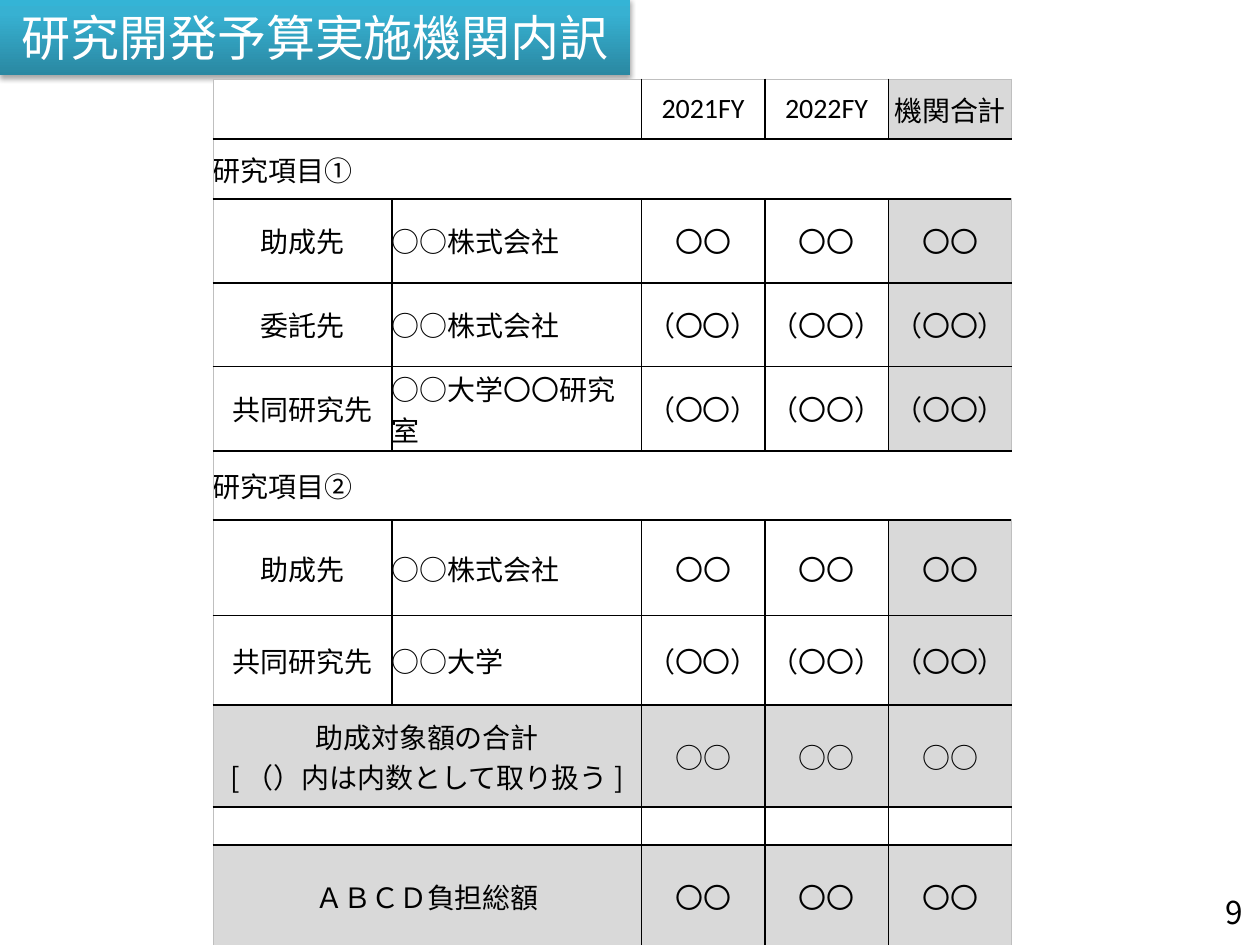
from dataclasses import dataclass

from lxml import etree
from pptx import Presentation
from pptx.dml.color import RGBColor
from pptx.enum import text
from pptx.oxml import parse_xml
from pptx.oxml.ns import nsdecls, qn
from pptx.util import Pt

BLACK = RGBColor(0x00, 0x00, 0x00)
WHITE = RGBColor(0xFF, 0xFF, 0xFF)
GREY = RGBColor(0xD9, 0xD9, 0xD9)
EDGE = RGBColor(0xBF, 0xBF, 0xBF)
LATIN, CJK = "Calibri", "Noto Sans CJK JP"
CENTER, LEFT, RIGHT = (text.PP_ALIGN.CENTER, text.PP_ALIGN.LEFT,
                       text.PP_ALIGN.RIGHT)
MIDDLE = text.MSO_ANCHOR.MIDDLE
NO_MARGINS = dict.fromkeys(
    ("margin_left", "margin_top", "margin_right", "margin_bottom"), 0)
GRADIENT = [(0, "2A88A2"), (80, "37B1D2"), (100, "34B4D6")]
COLUMNS = [102.2, 142.6, 70.6, 70.6, 70.6]
LAST = len(COLUMNS) - 1


@dataclass
class Row:
    height: float
    label: str = ""
    member: str = ""
    amounts: tuple = ("", "", "")
    span: int = 1              # columns taken by the label
    align: int = CENTER
    shade: tuple = (LAST,)     # grey columns
    thick: bool = False        # heavy line below
    amount_font: str = CJK


def section(height: float, label: str) -> Row:
    return Row(height, label, span=5, align=LEFT, shade=())


def party(height: float, label: str, member: str, amount: str, **kw) -> Row:
    return Row(height, label, member, (amount,) * 3, **kw)


def total(height: float, label: str, amount: str, **kw) -> Row:
    return Row(height, label, amounts=(amount,) * 3, span=2,
               shade=tuple(range(LAST + 1)), **kw)


FULL, PART = "〇〇", "（〇〇）"
ROWS = [
    Row(34.2, amounts=("2021FY", "2022FY", "機関合計"), span=2, thick=True,
        amount_font=LATIN),
    section(34.2, "研究項目①"),
    party(48, "助成先", "○○株式会社", FULL),
    party(48, "委託先", "○○株式会社", PART),
    party(48, "共同研究先", "○○大学〇〇研究室", PART, thick=True),
    section(39.6, "研究項目②"),
    party(54.7, "助成先", "○○株式会社", FULL),
    party(51, "共同研究先", "○○大学", PART),
    total(58.5, "助成対象額の合計\n[ （）内は内数として取り扱う ]", "○○", thick=True),
    Row(15, span=2, shade=()),
    total(58.5, "ＡＢＣＤ負担総額", FULL),
]


def set_format(obj, values: dict) -> None:
    for name, value in values.items():
        setattr(obj, name, value)


def write(tf, words: str, size: float, font: str, color: RGBColor,
          align: int) -> None:
    for i, line in enumerate(words.split("\n")):
        p = tf.paragraphs[0] if i == 0 else tf.add_paragraph()
        p.alignment = align
        r = p.add_run()
        r.text = line
        set_format(r.font, {"size": Pt(size), "name": font, "bold": False})
        r.font.color.rgb = color
        ea = etree.SubElement(r.font._element, qn("a:ea"))
        ea.set("typeface", CJK)


def add_border(cell, side: str, width: float, color: RGBColor) -> None:
    """Add one side; call in the order L, R, T, B and before the fill."""
    fill = (f'<a:solidFill><a:srgbClr val="{color}"/></a:solidFill>'
            if width else "<a:noFill/>")
    cell._tc.get_or_add_tcPr().append(parse_xml(
        f'<a:ln{side} {nsdecls("a")} w="{Pt(width)}">{fill}</a:ln{side}>'))


def vertical_line(row: Row, edge: int) -> tuple:
    if edge in (0, LAST + 1):
        return 0.5, EDGE
    if edge < row.span:
        return 0, BLACK
    return (1.5 if edge == 1 else 1), BLACK


def horizontal_line(edge: int) -> tuple:
    if edge == 0:
        return 0.5, EDGE
    return (1.5 if ROWS[edge - 1].thick else 1), BLACK


def fill_cell(cell, row: Row, r: int, c: int) -> None:
    set_format(cell, {**NO_MARGINS, "vertical_anchor": MIDDLE})
    for side, line in (("L", vertical_line(row, c)),
                       ("R", vertical_line(row, c + 1)),
                       ("T", horizontal_line(r)),
                       ("B", horizontal_line(r + 1))):
        add_border(cell, side, *line)
    cell.fill.solid()
    cell.fill.fore_color.rgb = GREY if c in row.shade else WHITE
    words = (row.label, row.member, *row.amounts)[c]
    if words and (c == 0 or c >= row.span):
        align = row.align if c == 0 else LEFT if c == 1 else CENTER
        font = row.amount_font if 1 < c < LAST else CJK
        write(cell.text_frame, words, 16, font, BLACK, align)


def add_budget_table(s) -> None:
    table = s.shapes.add_table(
        len(ROWS), len(COLUMNS), Pt(121.7), Pt(45.2), Pt(sum(COLUMNS)),
        Pt(sum(row.height for row in ROWS))).table
    set_format(table, {"first_row": False, "horz_banding": False})
    for column, width in zip(table.columns, COLUMNS):
        column.width = Pt(width)
    for r, row in enumerate(ROWS):
        table.rows[r].height = Pt(row.height)
        if row.span > 1:
            table.cell(r, 0).merge(table.cell(r, row.span - 1))
        for c in range(len(COLUMNS)):
            fill_cell(table.cell(r, c), row, r, c)


def add_title(s) -> None:
    sp = s.shapes.title
    set_format(sp, {"left": 0, "top": Pt(-1.2), "width": Pt(360),
                    "height": Pt(44)})
    stops = "".join(f'<a:gs pos="{pos * 1000}"><a:srgbClr val="{rgb}"/></a:gs>'
                    for pos, rgb in GRADIENT)
    sp._element.spPr.append(parse_xml(
        f'<a:gradFill {nsdecls("a")} rotWithShape="1"><a:gsLst>{stops}</a:gsLst>'
        '<a:lin ang="16200000" scaled="0"/></a:gradFill>'))
    sp._element.spPr.append(parse_xml(
        f'<a:effectLst {nsdecls("a")}><a:outerShdw blurRad="{Pt(3.1)}" '
        f'dist="{Pt(1.8)}" dir="5400000" rotWithShape="0">'
        '<a:srgbClr val="000000"><a:alpha val="35000"/></a:srgbClr>'
        '</a:outerShdw></a:effectLst>'))
    set_format(sp.text_frame, {"vertical_anchor": MIDDLE, "word_wrap": True,
                               "auto_size": text.MSO_AUTO_SIZE.NONE})
    write(sp.text_frame, "研究開発予算実施機関内訳", 28, LATIN, WHITE, CENTER)


def add_page_number(s) -> None:
    tf = s.shapes.add_textbox(Pt(668.9), Pt(512), Pt(41.6), Pt(18)).text_frame
    set_format(tf, {**NO_MARGINS, "vertical_anchor": MIDDLE, "word_wrap": True})
    write(tf, "9", 18, CJK, BLACK, RIGHT)


def main() -> None:
    prs = Presentation()
    set_format(prs, {"slide_width": Pt(720), "slide_height": Pt(540)})
    s = prs.slides.add_slide(prs.slide_layouts[5])
    add_title(s)
    add_page_number(s)
    add_budget_table(s)
    prs.save("out.pptx")


if __name__ == "__main__":
    main()
